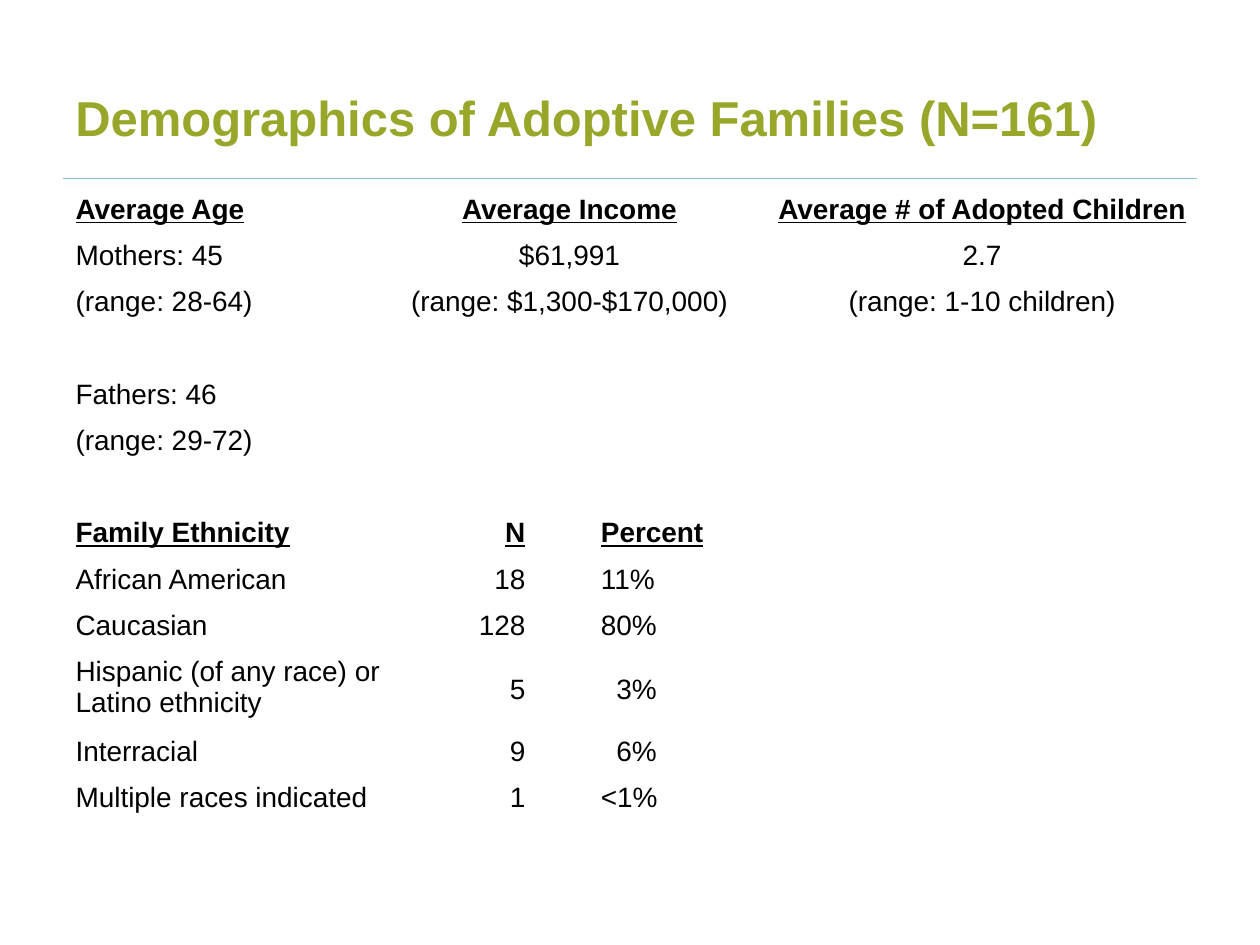
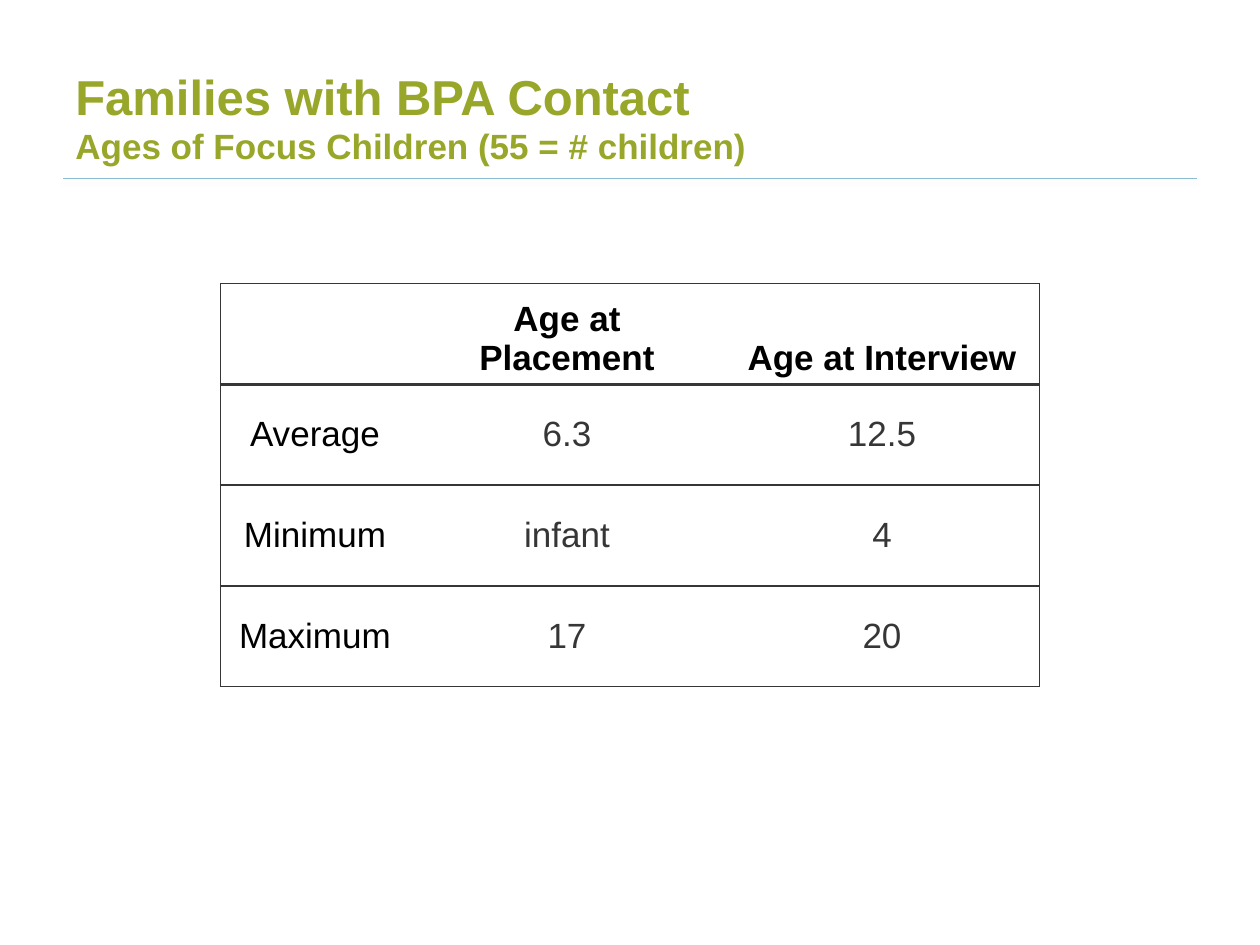
from lxml import etree
from pptx import Presentation
from pptx import util as u
from pptx.dml.color import RGBColor
from pptx.enum import shapes, text
from pptx.oxml import parse_xml
from pptx.oxml.ns import nsdecls, qn

Pt = u.Pt
L, C, R = text.PP_ALIGN.LEFT, text.PP_ALIGN.CENTER, text.PP_ALIGN.RIGHT
TOP, MID, BOTTOM = text.MSO_ANCHOR.TOP, text.MSO_ANCHOR.MIDDLE, text.MSO_ANCHOR.BOTTOM
FONT = "Arial"
GREEN, BLUE, BLACK, GRAY = "98A729", "8ABED3", "000000", "363636"
NO_STYLE = "{2D5ABB26-0587-4C30-8999-92F81FD0307C}"


def rgb(value):
    return RGBColor.from_string(value)


def add_run(p, words, size=16, color=BLACK, bold=False, underline=False):
    r = p.add_run()
    r.text = words
    f = r.font
    f.name, f.size, f.bold, f.underline = FONT, Pt(size), bold, underline
    f.color.rgb = rgb(color)


def set_border(cell, side, width):
    """Draw one edge of a cell; side is L, R, T or B, in that order."""
    cell._tc.get_or_add_tcPr().append(parse_xml(
        f'<a:ln{side} {nsdecls("a")} w="{Pt(width)}"><a:solidFill>'
        f'<a:srgbClr val="{GRAY}"/></a:solidFill></a:ln{side}>'))


class Deck:
    def __init__(self):
        self.prs = Presentation()
        self.prs.slide_width, self.prs.slide_height = Pt(720), Pt(540)
        self.s = None

    def slide(self, *title_lines):
        """Start a slide with its rule and title; each line is (words, size)."""
        self.s = self.prs.slides.add_slide(self.prs.slide_layouts[6])
        self.rule()
        tf = self.s.shapes.add_textbox(Pt(36), Pt(21.6), Pt(648), Pt(90)).text_frame
        tf.word_wrap = True
        tf.vertical_anchor = MID
        p = tf.paragraphs[0]
        for i, (words, size) in enumerate(title_lines):
            if i:
                p.add_line_break()
            add_run(p, words, size=size, color=GREEN, bold=True)

    def rule(self):
        ln = self.s.shapes.add_connector(
            shapes.MSO_CONNECTOR.STRAIGHT, Pt(36), Pt(102.2), Pt(684), Pt(102.2))
        ln.line.color.rgb = rgb(BLUE)
        ln.line.width = Pt(0.75)
        ln._element.spPr.append(parse_xml(
            f'<a:effectLst {nsdecls("a")}><a:outerShdw blurRad="{Pt(3.1)}" '
            f'dist="{Pt(1.6)}" dir="5400000" rotWithShape="0"><a:srgbClr val="000000">'
            '<a:alpha val="38000"/></a:srgbClr></a:outerShdw></a:effectLst>'))

    def table(self, x, y, cols, rows):
        """Add an unstyled table; cols and rows are widths and heights."""
        t = self.s.shapes.add_table(len(rows), len(cols), Pt(x), Pt(y),
                                    Pt(sum(cols)), Pt(sum(rows))).table
        t.first_row = t.horz_banding = False
        t._tbl.tblPr.find(qn("a:tableStyleId")).text = NO_STYLE
        for col, width in zip(t.columns, cols):
            col.width = Pt(width)
        for row, height in zip(t.rows, rows):
            row.height = Pt(height)
        return t

    def cell(self, cell, words="", align=L, anchor=TOP, left=7.2, right=7.2, **fmt):
        cell.fill.background()
        cell.vertical_anchor = anchor
        cell.margin_left, cell.margin_right = Pt(left), Pt(right)
        p = cell.text_frame.paragraphs[0]
        p.alignment = align
        if words:
            add_run(p, words, **fmt)
        else:
            etree.SubElement(p._p, qn("a:endParaRPr"), sz="1600")


def demographics(d):
    d.slide(("Demographics of Adoptive Families (N=161)", 28))
    averages = [
        ("Average Age", "Average Income", "Average # of Adopted Children"),
        ("Mothers: 45", "$61,991", "2.7"),
        ("(range: 28-64)", "(range: $1,300-$170,000)", "(range: 1-10 children)"),
        ("", "", ""),
        ("Fathers: 46", "", ""),
        ("(range: 29-72)", "", ""),
    ]
    ethnicities = [
        ("", "", ""),
        ("Family Ethnicity", "N", "Percent"),
        ("African American", "18", "11%"),
        ("Caucasian", "128", "80%"),
        ("Hispanic (of any race) or Latino ethnicity", "5", "3%"),
        ("Interracial", "9", "6%"),
        ("Multiple races indicated", "1", "<1%"),
    ]
    heights = [26.3 if row[0] else 25 for row in averages + ethnicities]
    t = d.table(36, 107.3, [188.6, 97.2, 104.4, 138.2, 131.8], heights)

    for i, (age, income, children) in enumerate(averages):
        head = dict(bold=i == 0, underline=i == 0)
        d.cell(t.cell(i, 0), age, **head)
        for j, words in ((1, income), (3, children)):
            t.cell(i, j).merge(t.cell(i, j + 1))
            d.cell(t.cell(i, j), words, align=C, **head)

    for i, (group, n, percent) in enumerate(ethnicities, len(averages)):
        is_head = group == "Family Ethnicity"
        head = dict(bold=is_head, underline=is_head)
        anchor = MID if group.startswith("Hispanic") else TOP
        digit_indent = 8.9 if percent in ("3%", "6%") else 0
        d.cell(t.cell(i, 0), group, **head)
        d.cell(t.cell(i, 1), n, align=R, anchor=anchor, right=21.6, **head)
        d.cell(t.cell(i, 2), percent, anchor=anchor, left=21.6 + digit_indent, **head)
        for j in (3, 4):
            d.cell(t.cell(i, j))


def focus_children(d):
    d.slide(("Families with BPA Contact", 28),
            ("Ages of Focus Children (55 = # children)", 20))
    ages = [
        ("", "Age at Placement", "Age at Interview"),
        ("Average", "6.3", "12.5"),
        ("Minimum", "infant", "4"),
        ("Maximum", "17", "20"),
    ]
    t = d.table(126, 162, [108, 180, 180], [57.6] * len(ages))
    for i, row in enumerate(ages):
        for j, words in enumerate(row):
            c = t.cell(i, j)
            if j == 0:
                set_border(c, "L", 1)
            if j == len(row) - 1:
                set_border(c, "R", 1)
            set_border(c, "T", 2.25 if i == 1 else 1)
            set_border(c, "B", 2.25 if i == 0 else 1)
            d.cell(c, words, align=C, anchor=MID if i else BOTTOM, size=20,
                   color=GRAY if i and j else BLACK, bold=i == 0)


def main():
    d = Deck()
    demographics(d)
    focus_children(d)
    d.prs.save("out.pptx")


if __name__ == "__main__":
    main()
